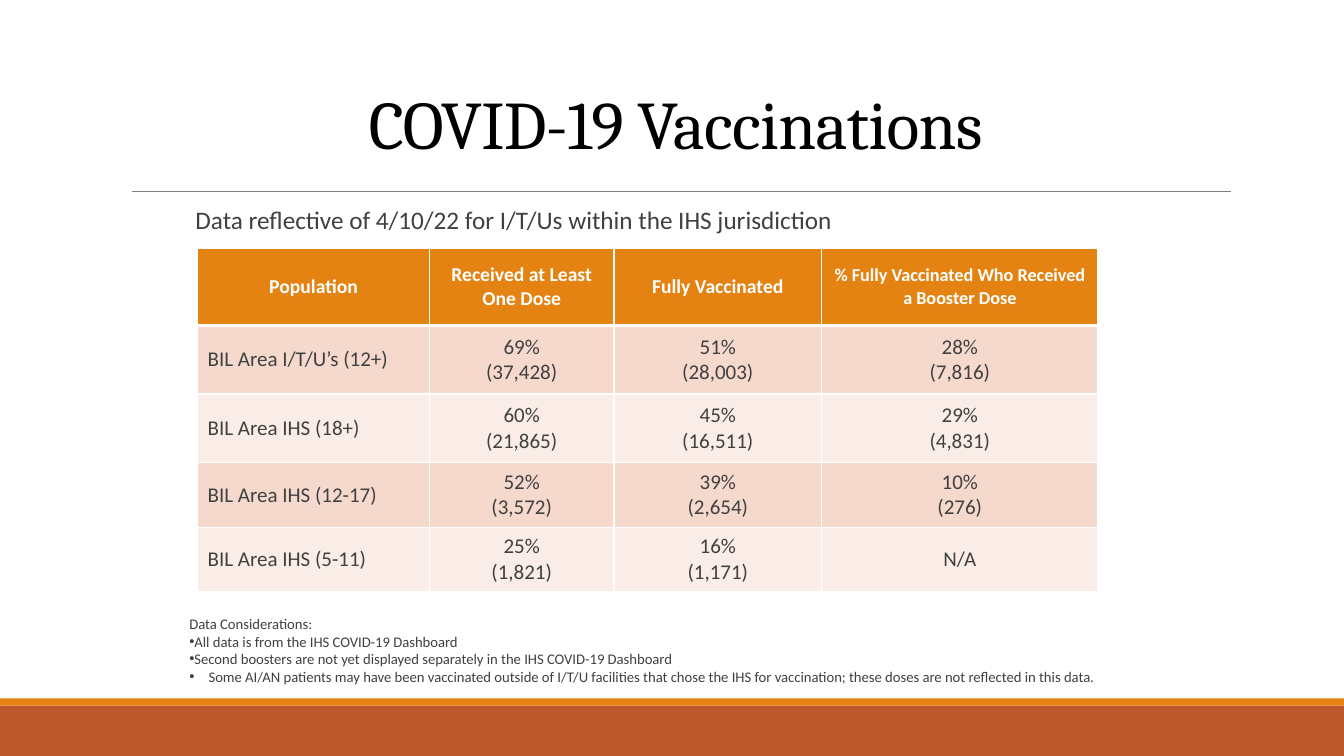
from lxml import etree
from pptx import Presentation
from pptx.dml.color import RGBColor
from pptx.enum import shapes, text
from pptx.oxml import ns
from pptx.util import Inches, Pt

ORANGE = RGBColor(0xE4, 0x83, 0x12)
RUST = RGBColor(0xBD, 0x58, 0x2C)
PINK = RGBColor(0xF5, 0xD9, 0xCC)
PALE_PINK = RGBColor(0xFA, 0xED, 0xE7)
GRAY = RGBColor(0x80, 0x80, 0x80)
DARK = RGBColor(0x40, 0x40, 0x40)
BLACK = RGBColor(0, 0, 0)
WHITE = RGBColor(0xFF, 0xFF, 0xFF)

COLUMN_WIDTHS = [2.3, 1.83, 2.06, 2.74]
ROW_HEIGHTS = [0.77, 0.68, 0.68, 0.64, 0.64]
ROWS = [
    ["Population", "Received at Least One Dose", "Fully Vaccinated",
     "% Fully Vaccinated Who Received a Booster Dose"],
    ["BIL Area I/T/U’s (12+)", "69%\n(37,428)", "51%\n(28,003)", "28%\n(7,816)"],
    ["BIL Area IHS (18+)", "60%\n(21,865)", "45%\n(16,511)", "29%\n(4,831)"],
    ["BIL Area IHS (12-17)", "52%\n(3,572)", "39%\n(2,654)", "10%\n(276)"],
    ["BIL Area IHS (5-11)", "25%\n(1,821)", "16%\n(1,171)", "N/A"],
]
# Text, left margin and first-line indent in inches
NOTES = [
    ("Data Considerations:", 0, 0),
    ("All data is from the IHS COVID-19 Dashboard", 0.01, -0.19),
    ("Second boosters are not yet displayed separately in the IHS COVID-19 Dashboard",
     0.01, -0.19),
    ("Some AI/AN patients may have been vaccinated outside of I/T/U facilities that "
     "chose the IHS for vaccination; these doses are not reflected in this data.",
     0.19, -0.19),
]


def write(tf, content, size, color, font="Calibri", bold=False, align=text.PP_ALIGN.LEFT):
    """Fill a text frame, one paragraph a line, in a single style."""
    tf.text = content
    for p in tf.paragraphs:
        p.alignment = align
        for r in p.runs:
            r.font.name, r.font.size, r.font.bold = font, Pt(size), bold
            r.font.color.rgb = color


def add_border(cell, side, points):
    ln = etree.SubElement(cell._tc.get_or_add_tcPr(), ns.qn(f"a:ln{side}"), w=str(Pt(points)))
    fill = etree.SubElement(ln, ns.qn("a:solidFill"))
    etree.SubElement(fill, ns.qn("a:srgbClr"), val=str(WHITE))


prs = Presentation()
prs.slide_width, prs.slide_height = Inches(13.33), Inches(7.5)
s = prs.slides.add_slide(prs.slide_layouts[6])

# Footer bands
for top, height, color in [(7, 0.5, RUST), (6.93, 0.07, ORANGE)]:
    band = s.shapes.add_shape(shapes.MSO_SHAPE.RECTANGLE, 0, Inches(top),
                              prs.slide_width, Inches(height))
    band.shadow.inherit = False
    band.fill.solid()
    band.fill.fore_color.rgb = color
    band.line.fill.background()

# Title and rule
rule = s.shapes.add_connector(shapes.MSO_CONNECTOR.STRAIGHT, Inches(1.31), Inches(1.9),
                              Inches(12.21), Inches(1.9))
rule.line.color.rgb = GRAY
rule.line.width = Pt(0.5)
etree.SubElement(rule._element.spPr, ns.qn("a:effectLst"))

title = s.shapes.add_textbox(Inches(1.2), Inches(0.31), Inches(11), Inches(1.36))
tf = title.text_frame
tf.word_wrap = True
tf.vertical_anchor = text.MSO_ANCHOR.BOTTOM
write(tf, "COVID-19 Vaccinations", 48.6, BLACK, "Cambria", align=text.PP_ALIGN.CENTER)
tf.paragraphs[0].line_spacing = 0.85
tf.paragraphs[0].runs[0].font._element.set("spc", "-50")

# Vaccination table
frame = s.shapes.add_table(len(ROWS), len(COLUMN_WIDTHS), Inches(1.96), Inches(2.46),
                           Inches(sum(COLUMN_WIDTHS)), Inches(sum(ROW_HEIGHTS)))
table = frame.table
for column, width in zip(table.columns, COLUMN_WIDTHS):
    column.width = Inches(width)
for row, height in zip(table.rows, ROW_HEIGHTS):
    row.height = Inches(height)

for i, values in enumerate(ROWS):
    header = i == 0
    for j, value in enumerate(values):
        cell = table.cell(i, j)
        cell.vertical_anchor = text.MSO_ANCHOR.MIDDLE
        for side in "LRTB":
            thick = (header and side == "B") or (i == 1 and side == "T")
            add_border(cell, side, 3 if thick else 1)
        cell.fill.solid()
        cell.fill.fore_color.rgb = ORANGE if header else PINK if i % 2 else PALE_PINK
        size = 15 if not header else 13 if j == 3 else 14
        align = text.PP_ALIGN.CENTER if header or j else text.PP_ALIGN.LEFT
        write(cell.text_frame, value, size, WHITE if header else DARK, bold=header, align=align)

# Caption and notes
caption = s.shapes.add_textbox(Inches(1.84), Inches(1.98), Inches(6.59), Inches(0.4))
write(caption.text_frame, "Data reflective of 4/10/22 for I/T/Us within the IHS jurisdiction",
      18, DARK)

notes = s.shapes.add_textbox(Inches(1.78), Inches(6.05), Inches(9.85), Inches(0.81))
notes.text_frame.word_wrap = True
write(notes.text_frame, "\n".join(note for note, _, _ in NOTES), 10.5, DARK)
for p, (_, margin, indent) in zip(notes.text_frame.paragraphs, NOTES):
    pPr = p._p.get_or_add_pPr()
    pPr.set("marL", str(Inches(margin)))
    pPr.set("indent", str(Inches(indent)))
    if indent:
        etree.SubElement(pPr, ns.qn("a:buFont"), typeface="Arial")
        etree.SubElement(pPr, ns.qn("a:buChar"), char="•")

prs.save("out.pptx")
